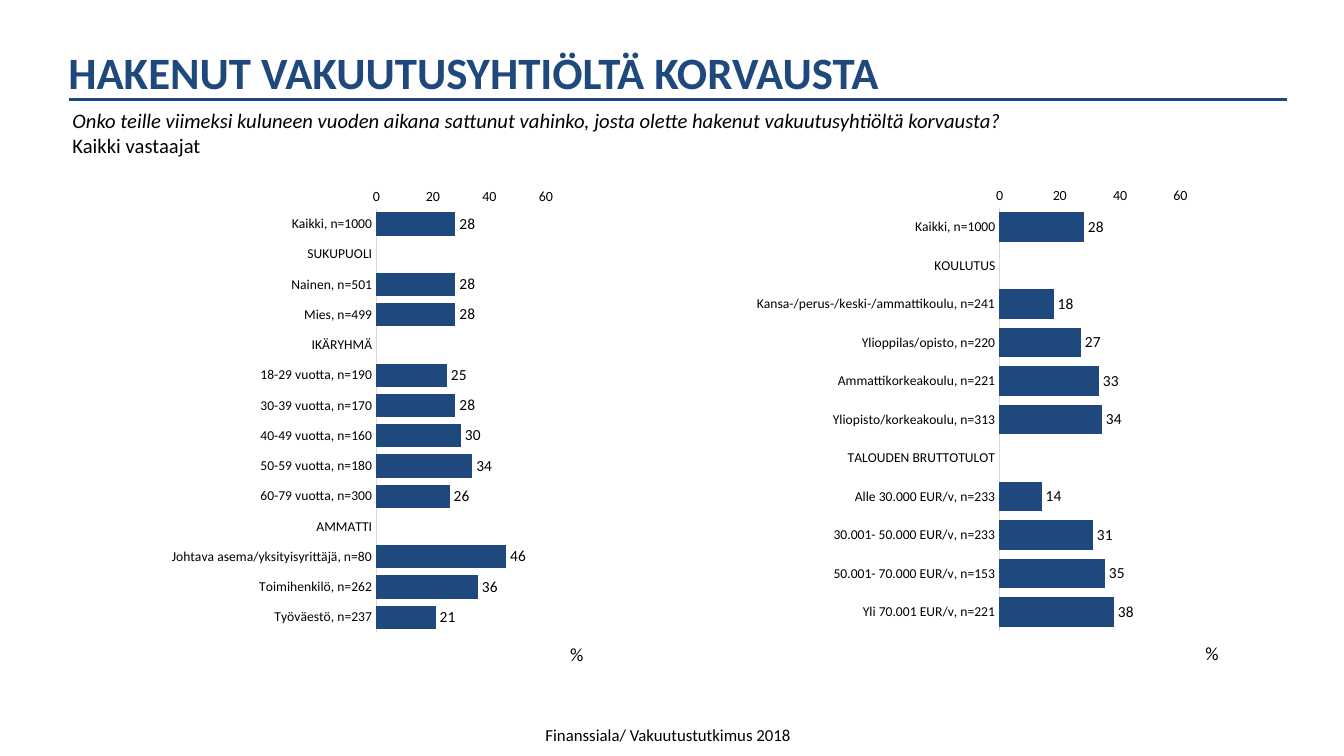
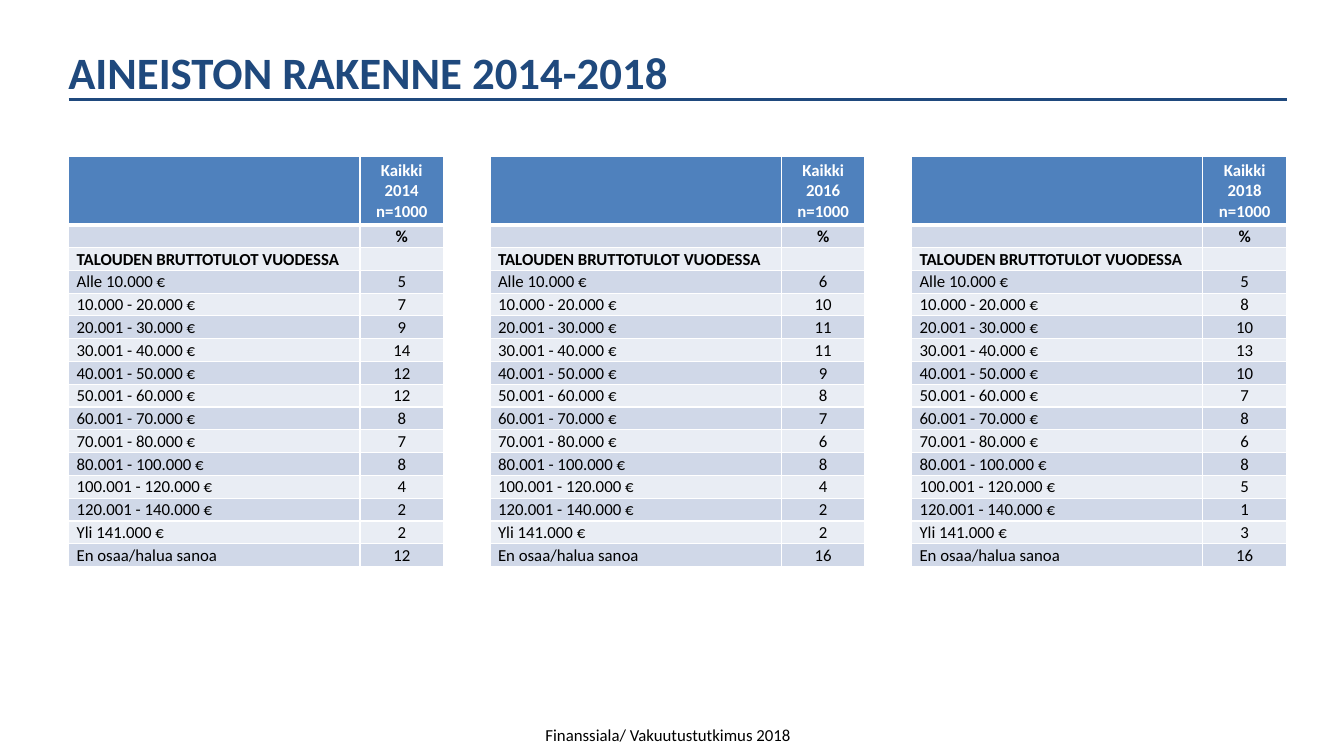
from lxml.etree import SubElement
from pptx import Presentation
from pptx.chart.data import CategoryChartData
from pptx.dml.color import RGBColor
from pptx.enum.chart import XL_AXIS_CROSSES, XL_CHART_TYPE, XL_LABEL_POSITION, XL_TICK_MARK
from pptx.enum.shapes import MSO_CONNECTOR
from pptx.enum.text import MSO_ANCHOR, MSO_AUTO_SIZE, PP_ALIGN
from pptx.oxml import parse_xml
from pptx.oxml.ns import nsdecls, qn
from pptx.util import Inches, Pt

FACE = "Calibri"
HUES = {"navy": "1F497D", "blue": "4F81BD", "dark": "D0D8E8", "pale": "E9EDF4",
        "white": "FFFFFF", "black": "000000", "grey": "D9D9D9"}
FOOTER = "Finanssiala/ Vakuutustutkimus 2018"

CLAIM = "HAKENUT VAKUUTUSYHTIÖLTÄ KORVAUSTA"
ASK = ("Onko teille viimeksi kuluneen vuoden aikana sattunut vahinko, "
       "josta olette hakenut vakuutusyhtiöltä korvausta?")
BASE = "Kaikki vastaajat"
CHARTS = [
    {"box": (0.79, 1.77, 6.3, 4.88), "plot": (0.467, 0.062, 0.267, 0.861),
     "unit": (5.51, 6.33, 0.42, 0.33),
     "rows": [("Kaikki, n=1000", 28), ("SUKUPUOLI", None), ("Nainen, n=501", 28),
              ("Mies, n=499", 28), ("IKÄRYHMÄ", None), ("18-29 vuotta, n=190", 25),
              ("30-39 vuotta, n=170", 28), ("40-49 vuotta, n=160", 30),
              ("50-59 vuotta, n=180", 34), ("60-79 vuotta, n=300", 26),
              ("AMMATTI", None), ("Johtava asema/yksityisyrittäjä, n=80", 46),
              ("Toimihenkilö, n=262", 36), ("Työväestö, n=237", 21)]},
    {"box": (6.56, 1.76, 6.72, 4.88), "plot": (0.499, 0.062, 0.267, 0.861),
     "unit": (11.81, 6.32, 0.42, 0.33),
     "rows": [("Kaikki, n=1000", 28), ("KOULUTUS", None),
              ("Kansa-/perus-/keski-/ammattikoulu, n=241", 18),
              ("Ylioppilas/opisto, n=220", 27), ("Ammattikorkeakoulu, n=221", 33),
              ("Yliopisto/korkeakoulu, n=313", 34), ("TALOUDEN BRUTTOTULOT", None),
              ("Alle 30.000 EUR/v, n=233", 14), ("30.001- 50.000 EUR/v, n=233", 31),
              ("50.001- 70.000 EUR/v, n=153", 35), ("Yli 70.001 EUR/v, n=221", 38)]},
]

SAMPLE = "AINEISTON RAKENNE 2014-2018"
GROUP = "TALOUDEN BRUTTOTULOT VUODESSA"
BANDS = ["Alle 10.000 €", "10.000 - 20.000 €", "20.001 - 30.000 €", "30.001 - 40.000 €",
         "40.001 - 50.000 €", "50.001 - 60.000 €", "60.001 - 70.000 €", "70.001 - 80.000 €",
         "80.001 - 100.000 €", "100.001 - 120.000 €", "120.001 - 140.000 €",
         "Yli 141.000 €", "En osaa/halua sanoa"]
YEARS = {"2014": [5, 7, 9, 14, 12, 12, 8, 7, 8, 4, 2, 2, 12],
         "2016": [6, 10, 11, 11, 9, 8, 7, 6, 8, 4, 2, 2, 16],
         "2018": [5, 8, 10, 13, 10, 7, 8, 6, 8, 5, 1, 3, 16]}
LEFT, TOP, STEP = 0.68, 1.55, 4.18
COLS = (2.89, 0.83)
HEAD, TALL = 0.68, 4.07


def rgb(hue):
    return RGBColor.from_string(HUES[hue])


def style(font, size, hue="black", **looks):
    looks = {"name": FACE, "size": Pt(size), **looks}
    for key, val in looks.items():
        setattr(font, key, val)
    font.color.rgb = rgb(hue)


def write(frame, lines, align=PP_ALIGN.LEFT):
    """Fill a text frame; each line is (text, font size, format values)."""
    for i, (text, size, looks) in enumerate(lines):
        para = frame.add_paragraph() if i else frame.paragraphs[0]
        para.alignment = align
        run = para.add_run()
        run.text = text
        style(run.font, size, **looks)


def add_text(slide, box, lines, align=PP_ALIGN.LEFT, wrap=True, pad=(0.1, 0.05)):
    frame = slide.shapes.add_textbox(*map(Inches, box)).text_frame
    frame.word_wrap = wrap
    frame.auto_size = MSO_AUTO_SIZE.SHAPE_TO_FIT_TEXT
    frame.margin_left = frame.margin_right = Inches(pad[0])
    frame.margin_top = frame.margin_bottom = Inches(pad[1])
    write(frame, lines, align)


def add_page(deck, title):
    """Add a slide with the shared title, rule and footer."""
    slide = deck.slides.add_slide(deck.slide_layouts[6])
    rule = slide.shapes.add_connector(
        MSO_CONNECTOR.STRAIGHT, *map(Inches, (LEFT, 0.99, 12.76, 0.99)))
    rule.line.color.rgb = rgb("navy")
    rule.line.width = Pt(2.25)
    SubElement(rule.element.spPr, qn("a:effectLst"))
    add_text(slide, (0.58, 0.39, 11.9, 0.64), [(title, 32, {"hue": "navy", "bold": True})])
    add_text(slide, (5.25, 7.11, 2.78, 0.36), [(FOOTER, 12, {})], wrap=False, pad=(0.16, 0.08))
    return slide


def set_plot(chart, plot):
    """Pin the inner plot area to fractions of the chart."""
    area = next(chart.element.iter(qn("c:plotArea")))
    for old in area.findall(qn("c:layout")):
        area.remove(old)
    tags = [("layoutTarget", "inner"), ("xMode", "edge"), ("yMode", "edge"),
            *zip("xywh", plot)]
    body = "".join(f'<c:{tag} val="{val}"/>' for tag, val in tags)
    area.insert(0, parse_xml(f'<c:layout {nsdecls("c")}><c:manualLayout>{body}'
                             '</c:manualLayout></c:layout>'))


def add_bars(slide, item):
    names, vals = zip(*item["rows"])
    data = CategoryChartData()
    data.categories = names
    data.add_series("Series 1", vals)
    chart = slide.shapes.add_chart(
        XL_CHART_TYPE.BAR_CLUSTERED, *map(Inches, item["box"]), data).chart
    chart.has_title = chart.has_legend = False
    style(chart.font, 10)
    set_plot(chart, item["plot"])

    cat, val = chart.category_axis, chart.value_axis
    for axis, size in ((cat, 9.7), (val, 10)):
        axis.has_major_gridlines = False
        axis.major_tick_mark = axis.minor_tick_mark = XL_TICK_MARK.NONE
        style(axis.tick_labels.font, size)
    cat.reverse_order = True
    cat.crosses = XL_AXIS_CROSSES.MAXIMUM
    cat.format.line.color.rgb = rgb("grey")
    cat.format.line.width = Pt(0.75)
    val.minimum_scale, val.maximum_scale, val.major_unit = 0, 60, 20
    val.tick_labels.number_format = "#,##0"
    val.tick_labels.number_format_is_linked = False
    val.format.line.fill.background()

    plot = chart.plots[0]
    plot.gap_width = 30
    plot.vary_by_categories = False
    bars = plot.series[0]
    bars.format.fill.solid()
    bars.format.fill.fore_color.rgb = rgb("navy")
    labels = bars.data_labels
    labels.show_value = True
    labels.position = XL_LABEL_POSITION.OUTSIDE_END
    style(labels.font, 11)
    add_text(slide, item["unit"], [("%", 13.3, {})], PP_ALIGN.CENTER)


def set_cell(cell, lines, row, col):
    looks = {"hue": "black" if row else "white", "bold": row < 3}
    fill = ("dark" if row % 2 else "pale") if row else "blue"
    cell.margin_left = Inches(0.01 if col else 0.08)
    cell.margin_right = cell.margin_top = Inches(0.01)
    cell.margin_bottom = 0
    cell.vertical_anchor = MSO_ANCHOR.MIDDLE
    if lines:
        write(cell.text_frame, [(line, 12, looks) for line in lines],
              PP_ALIGN.CENTER if col else PP_ALIGN.LEFT)
    else:
        para = cell.text_frame.paragraphs[0]
        SubElement(para._p, qn("a:endParaRPr"), sz="1200")
    props = cell._tc.get_or_add_tcPr()
    for side in "LRTB":
        thick = (row, side) in ((0, "B"), (1, "T"))
        edge = SubElement(props, qn(f"a:ln{side}"), w=str(Pt(3 if thick else 1)))
        SubElement(SubElement(edge, qn("a:solidFill")), qn("a:srgbClr"), val=HUES["white"])
    cell.fill.solid()
    cell.fill.fore_color.rgb = rgb(fill)


def add_year(slide, left, year, vals):
    rows = [([], ["Kaikki", year, "n=1000"]), ([], ["%"]), ([GROUP], [])]
    rows += [([band], [str(val)]) for band, val in zip(BANDS, vals)]
    table = slide.shapes.add_table(
        len(rows), len(COLS), *map(Inches, (left, TOP, sum(COLS), TALL))).table
    for col, width in zip(table.columns, COLS):
        col.width = Inches(width)
    for r, cells in enumerate(rows):
        table.rows[r].height = Inches((TALL - HEAD) / (len(rows) - 1) if r else HEAD)
        for c, lines in enumerate(cells):
            set_cell(table.cell(r, c), lines, r, c)


def main():
    deck = Presentation()
    deck.slide_width, deck.slide_height = Inches(13.33), Inches(7.5)

    slide = add_page(deck, CLAIM)
    add_text(slide, (0.62, 1.02, 12.13, 0.59),
             [(ASK, 14.7, {"italic": True}), (BASE, 14.7, {})])
    for item in CHARTS:
        add_bars(slide, item)

    slide = add_page(deck, SAMPLE)
    for i, (year, vals) in enumerate(YEARS.items()):
        add_year(slide, LEFT + i * STEP, year, vals)

    deck.save("out.pptx")


if __name__ == "__main__":
    main()
